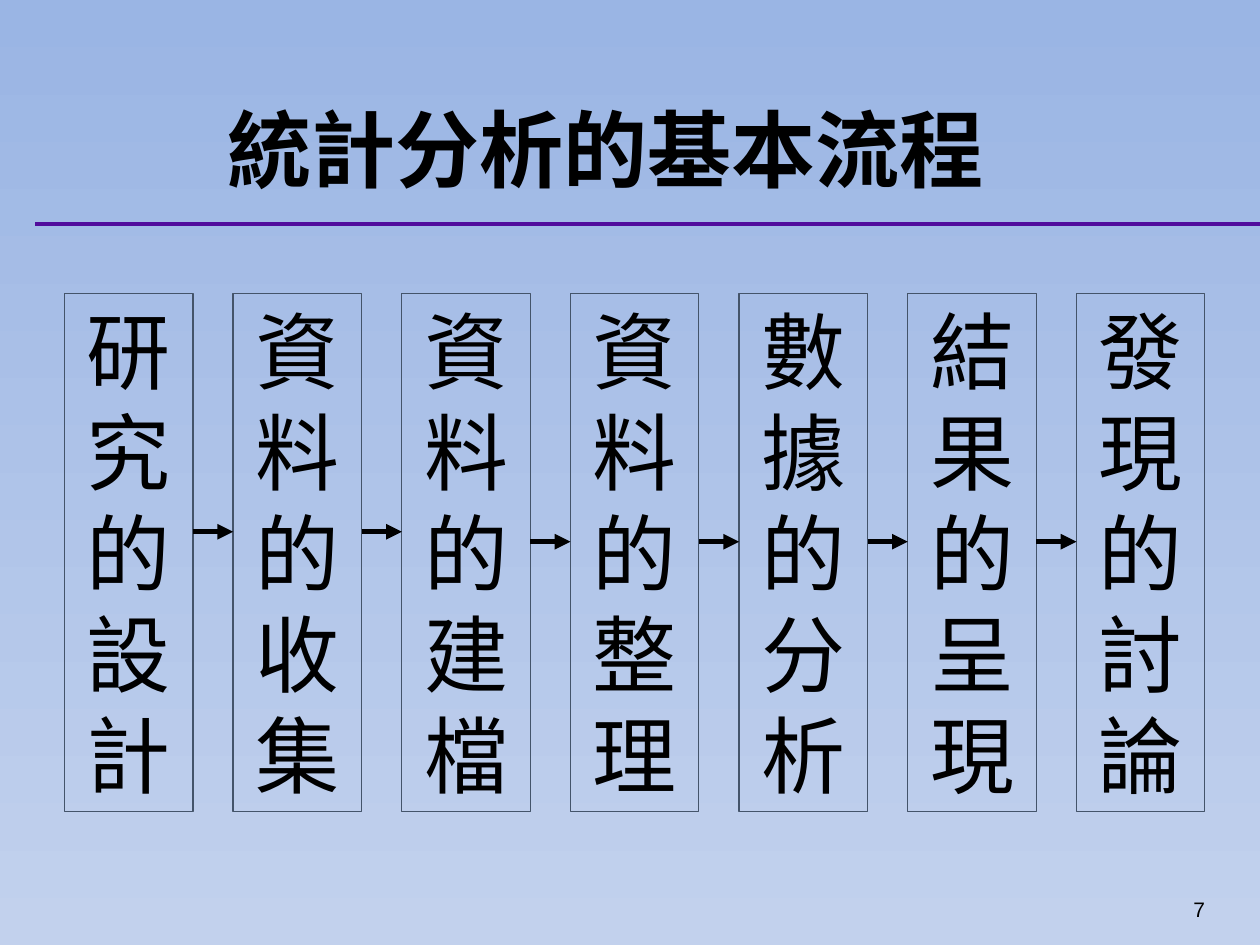
from lxml import etree
from pptx import Presentation
from pptx.dml.color import RGBColor
from pptx.enum.shapes import MSO_CONNECTOR, MSO_SHAPE
from pptx.enum.text import MSO_ANCHOR as Anchor, MSO_AUTO_SIZE as AutoSize, PP_ALIGN as Align
from pptx.oxml.ns import qn
from pptx.util import Cm, Pt


def color(hex_value):
    return RGBColor.from_string(hex_value)


def write(shape, text, font_name, size, align, anchor, bold=False):
    frame = shape.text_frame
    frame.word_wrap = True
    frame.vertical_anchor = anchor
    para = frame.paragraphs[0]
    para.text = text
    para.alignment = align
    para.font.name = font_name
    para.font.size = Pt(size)
    para.font.bold = bold
    para.font.color.rgb = color("000000")
    # East Asian characters follow the same font
    for span in para.runs:
        span.font.name = font_name
        latin = span.font._element.find(qn("a:latin"))
        east_asian = etree.Element(qn("a:ea"), typeface=font_name)
        latin.addnext(east_asian)


deck = Presentation()
deck.slide_width, deck.slide_height = Cm(25.4), Cm(19.05)
page = deck.slides.add_slide(deck.slide_layouts[6])

# Background, light towards the bottom
fill = page.background.fill
fill.gradient()
fill.gradient_angle = 270
for stop, shade in zip(fill.gradient_stops, ("9AB5E4", "C2D1ED")):
    stop.color.rgb = color(shade)

# Title
title = page.shapes.add_textbox(Cm(1.42), Cm(1.93), Cm(21.59), Cm(2.11))
write(title, "統計分析的基本流程", "Noto Sans CJK SC", 48, Align.CENTER, Anchor.MIDDLE, bold=True)

# Process steps, one narrow box each
steps = ["研究的設計", "資料的收集", "資料的建檔", "資料的整理",
         "數據的分析", "結果的呈現", "發現的討論"]
left, pitch, width = 1.3, 3.4, 2.59
for index, step in enumerate(steps):
    box = page.shapes.add_shape(MSO_SHAPE.RECTANGLE, Cm(left + index * pitch), Cm(5.92),
                                Cm(width), Cm(10.44))
    box.shadow.inherit = False
    box.fill.background()
    box.line.color.rgb = color("44546A")
    box.line.width = Pt(0.75)
    write(box, step, "Roboto", 48, Align.CENTER, Anchor.TOP)
    box.text_frame.auto_size = AutoSize.SHAPE_TO_FIT_TEXT

# Arrows across the gaps (the first two sit higher), then the rule below the title
lines = []
for index in range(len(steps) - 1):
    height = 10.72 if index < 2 else 10.92
    start = left + index * pitch + width
    lines.append((start, left + (index + 1) * pitch, height, "000000", 3, True))
lines.append((0.71, 25.4, 4.52, "510C9C", 2.25, False))

for start, end, height, shade, weight, has_arrow in lines:
    line = page.shapes.add_connector(MSO_CONNECTOR.STRAIGHT, Cm(start), Cm(height),
                                     Cm(end), Cm(height))
    line.line.color.rgb = color(shade)
    line.line.width = Pt(weight)
    if has_arrow:
        etree.SubElement(line.line._get_or_add_ln(), qn("a:tailEnd"), type="triangle")
    etree.SubElement(line._element.spPr, qn("a:effectLst"))

# Page number
number = page.shapes.add_textbox(Cm(18.62), Cm(17.98), Cm(5.92), Cm(0.69))
write(number, "7", "Arial", 12, Align.RIGHT, Anchor.MIDDLE)

deck.save("out.pptx")
